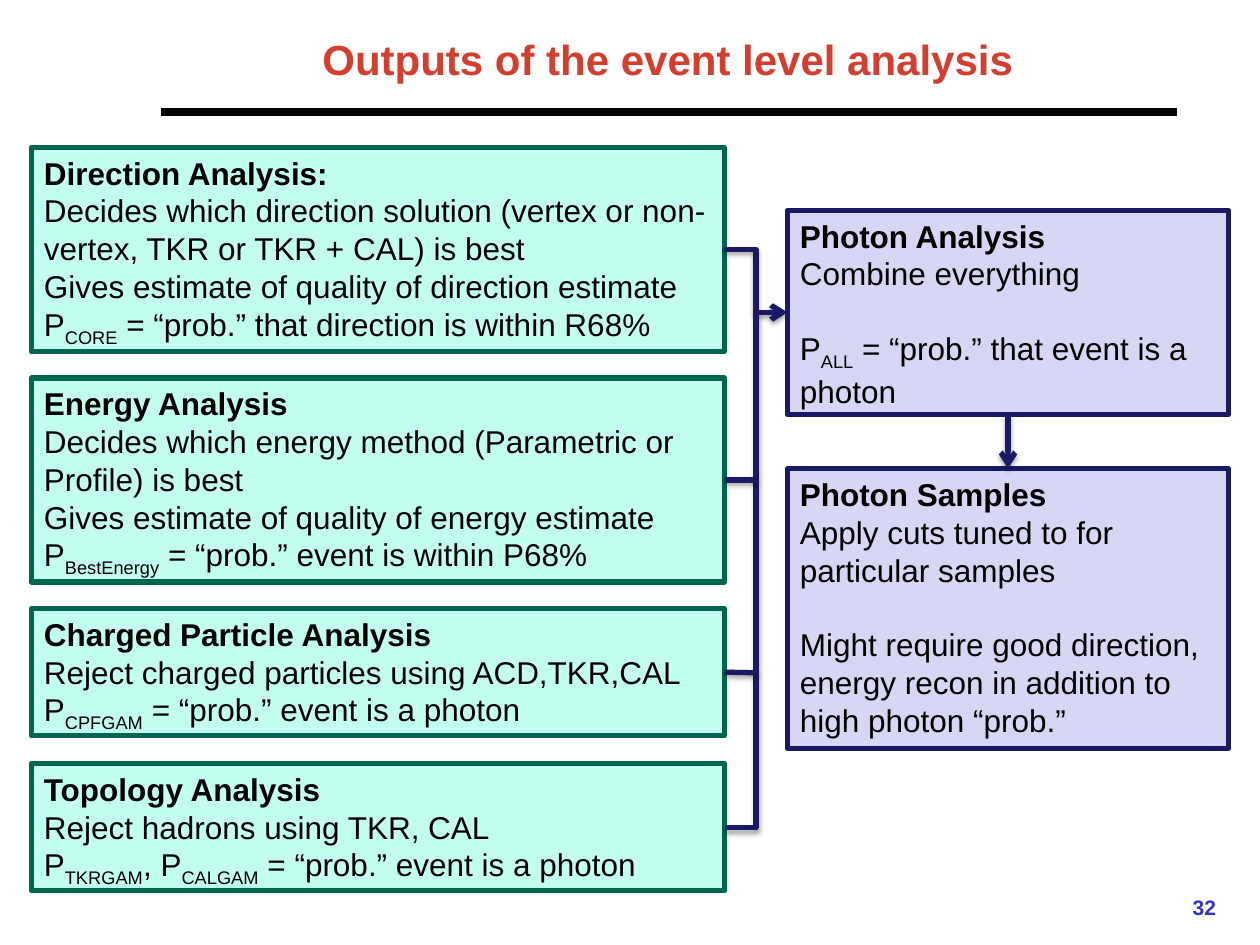
from lxml import etree
from pptx import Presentation
from pptx.dml.color import RGBColor
from pptx.enum.shapes import MSO_CONNECTOR, MSO_SHAPE
from pptx.enum.text import MSO_ANCHOR, MSO_AUTO_SIZE, PP_ALIGN
from pptx.oxml import parse_xml
from pptx.oxml.ns import nsdecls, qn
from pptx.util import Emu, Pt

STRAIGHT, ELBOW = MSO_CONNECTOR.STRAIGHT, MSO_CONNECTOR.ELBOW
RECTANGLE = MSO_SHAPE.RECTANGLE
MIDDLE, TOP = MSO_ANCHOR.MIDDLE, MSO_ANCHOR.TOP
LEFT, CENTER, RIGHT = PP_ALIGN.LEFT, PP_ALIGN.CENTER, PP_ALIGN.RIGHT
GROW = MSO_AUTO_SIZE.SHAPE_TO_FIT_TEXT
TOP_SIDE, LEFT_SIDE, BOTTOM_SIDE, RIGHT_SIDE = range(4)

PX = 9144  # 100 px to the inch
FONT = "Arial"
BLACK = RGBColor(0x00, 0x00, 0x00)
RED = RGBColor(0xD4, 0x3E, 0x2E)
BLUE = RGBColor(0x33, 0x33, 0xCC)
MINT = RGBColor(0xC2, 0xFF, 0xF0)
GREEN = RGBColor(0x00, 0x66, 0x4D)
LILAC = RGBColor(0xD6, 0xD6, 0xF5)
NAVY = RGBColor(0x19, 0x19, 0x66)

ANALYSIS_LEFT, ANALYSIS_WIDTH = 25, 550
PHOTON_LEFT, PHOTON_WIDTH = 625, 350
BUS_X, BUS_TOP = 600, 247
BLANK_LINE = 21

# Text between bars is subscript.
ANALYSES = [
    (117, 162, [
        "Direction Analysis:",
        "Decides which direction solution (vertex or non-vertex, TKR or TKR + CAL) is best",
        "Gives estimate of quality of direction estimate",
        "P|CORE| = “prob.” that direction is within R68%"]),
    (300, 162, [
        "Energy Analysis",
        "Decides which energy method (Parametric or Profile) is best",
        "Gives estimate of quality of energy estimate",
        "P|BestEnergy| = “prob.” event is within P68%"]),
    (483, 101, [
        "Charged Particle Analysis",
        "Reject charged particles using ACD,TKR,CAL",
        "P|CPFGAM| = “prob.” event is a photon"]),
    (606, 101, [
        "Topology Analysis",
        "Reject hadrons using TKR, CAL",
        "P|TKRGAM|, P|CALGAM| = “prob.” event is a photon"]),
]
PHOTON_ANALYSIS = [
    "Photon Analysis",
    "Combine everything",
    "P|ALL| = “prob.” that event is a photon"]
PHOTON_SAMPLES = [
    "Photon Samples",
    "Apply cuts tuned to for particular samples",
    "Might require good direction, energy recon in addition to",
    "high photon “prob.”"]


def px(*lengths):
    return [Emu(length * PX) for length in lengths]


def style_paragraph(para, size, color, bold, align):
    para.alignment = align
    para.font.name = FONT
    para.font.size = Pt(size)
    para.font.bold = bold
    para.font.color.rgb = color


def add_marked_text(para, text):
    """Add runs to the paragraph, lowering the parts between bars."""
    for index, part in enumerate(text.split("|")):
        span = para.add_run()
        span.text = part
        if index % 2:
            span.font._element.set("baseline", "-25000")


def add_box(page, left, top, width, height, lines, fill, border, gap_before=None):
    """Add a bordered box with a bold heading; gap_before is the line after a gap."""
    box = page.shapes.add_shape(RECTANGLE, *px(left, top, width, height))
    box.shadow.inherit = False
    box.fill.solid()
    box.fill.fore_color.rgb = fill
    box.line.color.rgb = border
    box.line.width = Pt(3)
    frame = box.text_frame
    frame.word_wrap = True
    frame.auto_size = GROW
    frame.vertical_anchor = TOP
    for index, line in enumerate(lines):
        para = frame.add_paragraph() if index else frame.paragraphs[0]
        add_marked_text(para, line)
        style_paragraph(para, 18, BLACK, index == 0, LEFT)
        if index == gap_before:
            para.space_before = Pt(BLANK_LINE)
    return box


def add_line(page, kind, start, end, color=NAVY, width=3, arrow=False, shadow=True):
    line = page.shapes.add_connector(kind, *px(*start, *end))
    line.line.color.rgb = color
    line.line.width = Pt(width)
    if arrow:
        tail = etree.SubElement(line.line._get_or_add_ln(), qn("a:tailEnd"))
        tail.set("type", "arrow")
    effects = parse_xml(f"<a:effectLst {nsdecls('a')}/>")
    if shadow:
        effects.append(parse_xml(
            f'<a:outerShdw {nsdecls("a")} blurRad="39370" dist="20320" dir="5400000" '
            'rotWithShape="0"><a:srgbClr val="000000"><a:alpha val="38000"/>'
            "</a:srgbClr></a:outerShdw>"))
    line._element.spPr.append(effects)
    return line


def add_title(page, text):
    title = page.shapes.title
    title.left, title.top, title.width, title.height = px(124, 11, 812, 72)
    title.text_frame.text = text
    title.text_frame.vertical_anchor = MIDDLE
    style_paragraph(title.text_frame.paragraphs[0], 24, RED, True, CENTER)


def add_page_number(page, number):
    box = page.shapes.add_textbox(*px(742, 700, 233, 40))
    box.text_frame.word_wrap = True
    box.text_frame.vertical_anchor = MIDDLE
    para = box.text_frame.paragraphs[0]
    para.text = number
    style_paragraph(para, 12, BLUE, True, RIGHT)


def connect_boxes(page, analyses, photon, samples):
    """Gather the analyses on one bus into photon, then lead on to samples."""
    direction, energy, charged, _ = analyses
    edge = ANALYSIS_LEFT + ANALYSIS_WIDTH
    inlet = add_line(page, ELBOW, (edge, 198), (PHOTON_LEFT, BUS_TOP), arrow=True)
    inlet.begin_connect(direction, RIGHT_SIDE)
    inlet.end_connect(photon, LEFT_SIDE)

    bus = add_line(page, ELBOW, (edge, 657), (BUS_X, BUS_TOP))
    bus._element.spPr.find(qn("a:prstGeom")).set("prst", "bentConnector2")

    for box, middle in ((energy, 381), (charged, 534)):
        branch = add_line(page, STRAIGHT, (edge, middle), (BUS_X, middle))
        branch.begin_connect(box, RIGHT_SIDE)

    center = PHOTON_LEFT + PHOTON_WIDTH // 2
    outlet = add_line(page, STRAIGHT, (center, 329), (center, 372), arrow=True)
    outlet.begin_connect(photon, BOTTOM_SIDE)
    outlet.end_connect(samples, TOP_SIDE)


def main():
    deck = Presentation()
    deck.slide_width, deck.slide_height = px(1000, 750)
    page = deck.slides.add_slide(deck.slide_layouts[5])
    add_line(page, STRAIGHT, (128, 89), (934, 89), BLACK, 4.5, shadow=False)
    add_title(page, "Outputs of the event level analysis")
    add_page_number(page, "32")
    analyses = [
        add_box(page, ANALYSIS_LEFT, top, ANALYSIS_WIDTH, height, lines, MINT, GREEN)
        for top, height, lines in ANALYSES]
    photon, samples = [
        add_box(page, PHOTON_LEFT, top, PHOTON_WIDTH, height, lines, LILAC, NAVY, 2)
        for top, height, lines in ((167, 162, PHOTON_ANALYSIS),
                                   (372, 222, PHOTON_SAMPLES))]
    connect_boxes(page, analyses, photon, samples)
    deck.save("out.pptx")


if __name__ == "__main__":
    main()
